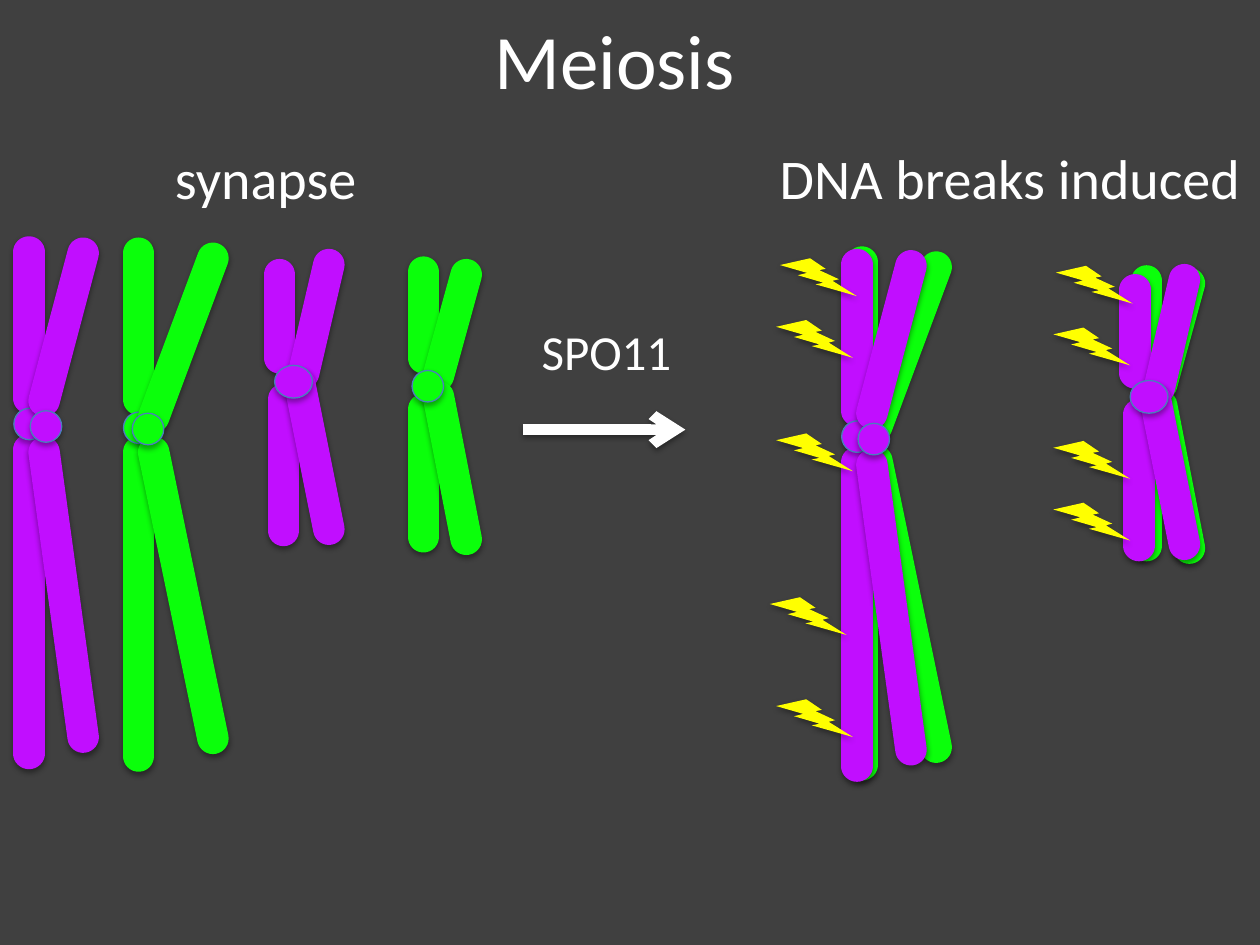
from pptx import Presentation
from pptx.dml.color import RGBColor
from pptx.enum.shapes import MSO_CONNECTOR, MSO_SHAPE
from pptx.enum.text import MSO_ANCHOR, MSO_AUTO_SIZE, PP_ALIGN
from pptx.oxml import parse_xml
from pptx.oxml.ns import nsdecls
from pptx.util import Emu, Pt

PX = 9144
FONT = "Calibri"
BACKGROUND = RGBColor(0x40, 0x40, 0x40)
WHITE = RGBColor(0xFF, 0xFF, 0xFF)
GREEN = RGBColor(0x0B, 0xFF, 0x0B)
PURPLE = RGBColor(0xC1, 0x0E, 0xFF)
YELLOW = RGBColor(0xFF, 0xFF, 0x00)
OUTLINE = RGBColor(0x4B, 0x7E, 0xBC)

LONG_GREEN = (
    [(110, 201, 110, 317), (110, 359, 110, 600), (98, 327, 25, 25)],
    [(169, 205, 122, 331), (122, 359, 169, 586), (105, 328, 25, 25)],
)
SHORT_GREEN = (
    [(336, 216, 336, 284), (336, 325, 336, 426), None],
    [(370, 218, 348, 298), (348, 315, 370, 428), (327, 294, 25, 25)],
)
LONG_PURPLE = (
    [(23, 200, 23, 316), (23, 357, 23, 598), (11, 324, 25, 25)],
    [(66, 201, 35, 318), (35, 359, 66, 585), (24, 326, 25, 25)],
)
SHORT_PURPLE = (
    [(222, 218, 222, 284), (225, 317, 225, 421), None],
    [(261, 210, 241, 296), (238, 305, 261, 420), (218, 290, 30, 26)],
)
BREAKS = [
    (619, 205), (616, 254), (616, 344), (611, 474), (616, 555),
    (838, 211), (836, 260), (836, 350), (836, 399),
]


def px(*lengths):
    return [Emu(length * PX) for length in lengths]


def add_shadow(shape, distance, opacity):
    shape._element.spPr.append(parse_xml(
        f'<a:effectLst {nsdecls("a")}><a:outerShdw blurRad="40000" dist="{distance}" '
        'dir="5400000" rotWithShape="0"><a:srgbClr val="000000">'
        f'<a:alpha val="{opacity}"/></a:srgbClr></a:outerShdw></a:effectLst>'))


def add_stroke(shapes, ends, color, width):
    stroke = shapes.add_connector(MSO_CONNECTOR.STRAIGHT, *px(*ends))
    stroke.line.color.rgb = color
    stroke.line.width = Pt(width)
    add_shadow(stroke, 20000, 38000)
    return stroke.line._get_or_add_ln()


def add_solid(shapes, preset, box, color, outline=None):
    solid = shapes.add_shape(preset, *px(*box))
    solid.fill.solid()
    solid.fill.fore_color.rgb = color
    if outline is None:
        solid.line.fill.background()
    else:
        solid.line.color.rgb = outline
        solid.line.width = Pt(0.75)
    add_shadow(solid, 23000, 35000)


def add_chromosome(shapes, chromatids, color, dx=0, dy=0):
    for upper_arm, lower_arm, centromere in chromatids:
        for x1, y1, x2, y2 in (upper_arm, lower_arm):
            ends = (x1 + dx, y1 + dy, x2 + dx, y2 + dy)
            add_stroke(shapes, ends, color, 18).set("cap", "rnd")
        if centromere:
            left, top, width, height = centromere
            add_solid(shapes, MSO_SHAPE.OVAL, (left + dx, top + dy, width, height),
                      color, OUTLINE)


def add_arrow(shapes, ends):
    line = add_stroke(shapes, ends, WHITE, 6)
    line.append(parse_xml(f'<a:tailEnd {nsdecls("a")} type="arrow"/>'))


def format_text(paragraph, size):
    paragraph.font.name = FONT
    paragraph.font.size = Pt(size)
    paragraph.font.color.rgb = WHITE


def add_title(slide, text, box):
    title = slide.shapes.title
    title.left, title.top, title.width, title.height = px(*box)
    title.text_frame.text = text
    title.text_frame.vertical_anchor = MSO_ANCHOR.MIDDLE
    heading = title.text_frame.paragraphs[0]
    heading.alignment = PP_ALIGN.CENTER
    format_text(heading, 44)


def add_label(shapes, text, box, size):
    frame = shapes.add_textbox(*px(*box)).text_frame
    frame.word_wrap = False
    frame.auto_size = MSO_AUTO_SIZE.SHAPE_TO_FIT_TEXT
    frame.text = text
    format_text(frame.paragraphs[0], size)


def main():
    presentation = Presentation()
    presentation.slide_width, presentation.slide_height = px(1000, 750)
    slide = presentation.slides.add_slide(presentation.slide_layouts[5])
    slide.background.fill.solid()
    slide.background.fill.fore_color.rgb = BACKGROUND
    shapes = slide.shapes

    add_title(slide, "Meiosis", (38, -16, 900, 125))
    add_arrow(shapes, (415, 341, 544, 341))
    add_label(shapes, "synapse", (129, 109, 167, 64), 32)
    add_label(shapes, "DNA breaks induced", (609, 109, 390, 64), 32)
    add_label(shapes, "SPO11", (420, 250, 124, 57), 28)

    for chromatids, dx, dy in (
        (LONG_GREEN, 574, 7), (SHORT_GREEN, 574, 7),
    ):
        add_chromosome(shapes, chromatids, GREEN)
        add_chromosome(shapes, chromatids, GREEN, dx, dy)
    for chromatids, dx, dy in (
        (LONG_PURPLE, 657, 10), (SHORT_PURPLE, 679, 12),
    ):
        add_chromosome(shapes.add_group_shape().shapes, chromatids, PURPLE)
        add_chromosome(shapes.add_group_shape().shapes, chromatids, PURPLE, dx, dy)

    for left, top in BREAKS:
        add_solid(shapes, MSO_SHAPE.LIGHTNING_BOLT, (left, top, 61, 30), YELLOW)

    presentation.save("out.pptx")


if __name__ == "__main__":
    main()
